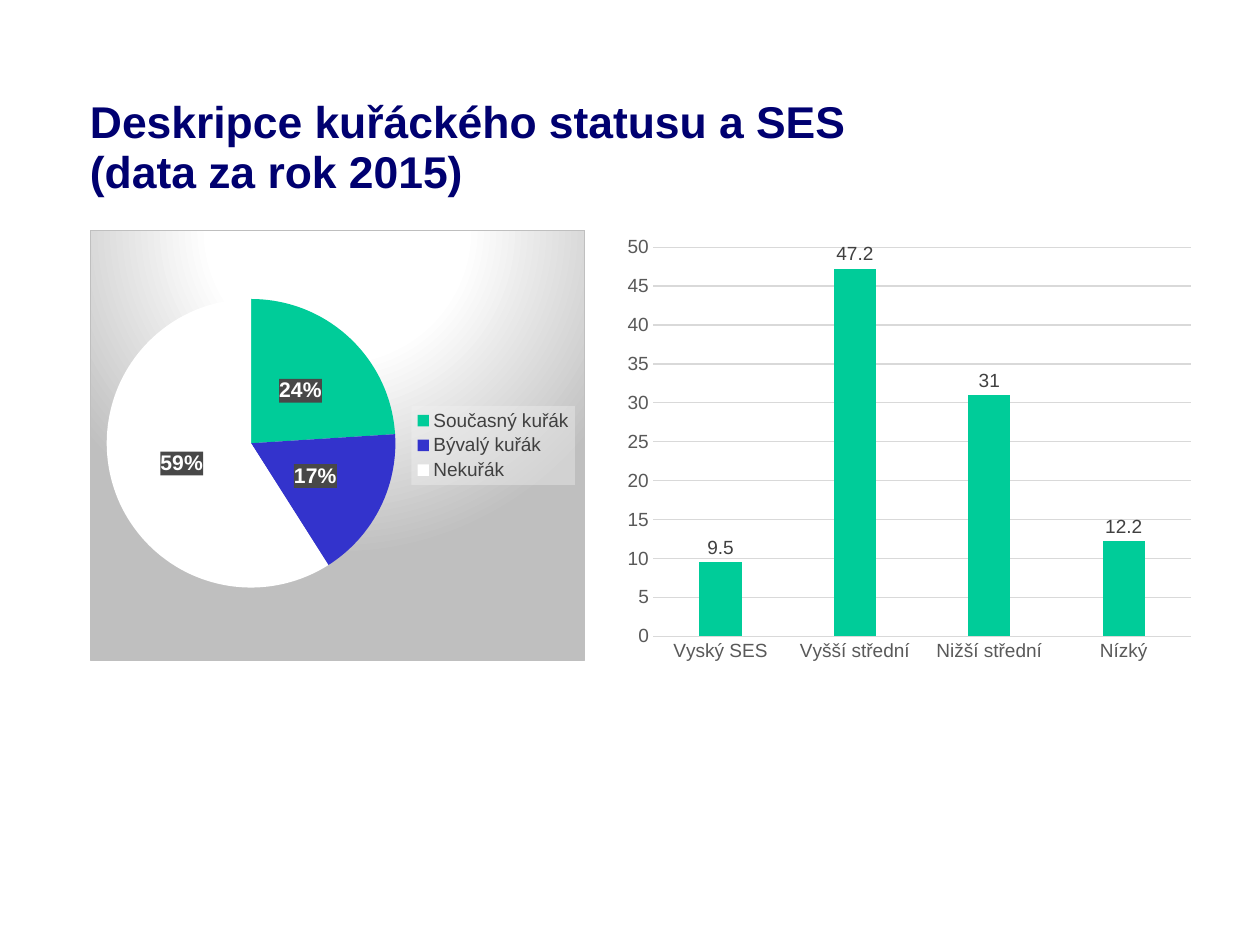
import pptx
import pptx.chart.data
import pptx.dml.color
import pptx.enum.chart
import pptx.enum.text
import pptx.oxml
import pptx.oxml.ns
import pptx.util

Cm = pptx.util.Cm
Pt = pptx.util.Pt
NAMESPACES = pptx.oxml.ns.nsdecls("c", "a")


def color(hex_string):
    return pptx.dml.color.RGBColor.from_string(hex_string)


def set_font(font, size, hex_string, bold=False):
    values = {"name": "Arial", "size": Pt(size), "bold": bold}
    for attribute, value in values.items():
        setattr(font, attribute, value)
    font.color.rgb = color(hex_string)


presentation = pptx.Presentation()
presentation.slide_width = Cm(28)
presentation.slide_height = Cm(21)
slide = presentation.slides.add_slide(presentation.slide_layouts[6])

title = slide.shapes.add_textbox(Cm(2), Cm(1.9), Cm(18.9), Cm(2.5))
title_format = {
    "word_wrap": False,
    "vertical_anchor": pptx.enum.text.MSO_ANCHOR.BOTTOM,
    "margin_left": 0,
    "margin_top": 0,
    "margin_right": 0,
    "margin_bottom": 0,
}
for attribute, value in title_format.items():
    setattr(title.text_frame, attribute, value)
paragraph = title.text_frame.paragraphs[0]
paragraph.text = "Deskripce kuřáckého statusu a SES\v(data za rok 2015)"
paragraph.line_spacing = 0.93
paragraph.alignment = pptx.enum.text.PP_ALIGN.LEFT
set_font(paragraph.font, 28, "000070", True)
for run in paragraph.runs:
    set_font(run.font, 28, "000070", True)

chart_type = pptx.enum.chart.XL_CHART_TYPE
label_position = pptx.enum.chart.XL_LABEL_POSITION
chart_specs = [
    {
        "type": chart_type.PIE,
        "box": (2, 5.1, 11, 9.6),
        "values": {"Současný kuřák": 24, "Bývalý kuřák": 17, "Nekuřák": 59},
        "plot_area": (0.03, 0.16, 0.59, 0.67),
        "label_font": (13.3, "FFFFFF", True),
        "labels": {
            "show_percentage": True,
            "show_value": False,
            "number_format": "0%",
            "number_format_is_linked": False,
            "position": label_position.CENTER,
        },
    },
    {
        "type": chart_type.COLUMN_CLUSTERED,
        "box": (13.6, 5.1, 13.13, 9.83),
        "values": {"Vyský SES": 9.5, "Vyšší střední": 47.2, "Nižší střední": 31, "Nízký": 12.2},
        "plot_area": (0.07, 0.04, 0.91, 0.88),
        "label_font": (12, "404040"),
        "labels": {"show_value": True, "position": label_position.OUTSIDE_END},
    },
]

charts = []
for chart_spec in chart_specs:
    chart_data = pptx.chart.data.CategoryChartData()
    chart_data.categories = list(chart_spec["values"])
    chart_data.add_series("Series 1", list(chart_spec["values"].values()))
    box = [Cm(length) for length in chart_spec["box"]]
    chart = slide.shapes.add_chart(chart_spec["type"], *box, chart_data).chart
    chart.has_title = False
    chart.has_legend = False
    set_font(chart.font, 10, "000000")
    plot = chart.plots[0]
    plot.vary_by_categories = chart_spec["type"] == chart_type.PIE
    plot.has_data_labels = True
    for attribute, value in chart_spec["labels"].items():
        setattr(plot.data_labels, attribute, value)
    set_font(plot.data_labels.font, *chart_spec["label_font"])

    plot_area = chart.element.xpath("c:chart/c:plotArea")[0]
    for layout in plot_area.xpath("c:layout"):
        plot_area.remove(layout)
    left, top, width, height = chart_spec["plot_area"]
    plot_area.insert(0, pptx.oxml.parse_xml(
        f'<c:layout {NAMESPACES}><c:manualLayout><c:layoutTarget val="inner"/>'
        '<c:xMode val="edge"/><c:yMode val="edge"/>'
        f'<c:x val="{left}"/><c:y val="{top}"/><c:w val="{width}"/><c:h val="{height}"/>'
        '</c:manualLayout></c:layout>'))
    charts.append(chart)

status_chart, ses_chart = charts

for index, hex_string in enumerate(["00CC99", "3333CC", "FFFFFF"]):
    fill = status_chart.plots[0].series[0].points[index].format.fill
    fill.solid()
    fill.fore_color.rgb = color(hex_string)
status_chart.has_legend = True
status_chart.legend.position = pptx.enum.chart.XL_LEGEND_POSITION.RIGHT
status_chart.legend.include_in_layout = False
set_font(status_chart.legend.font, 12, "404040")

gradient_stops = "".join(
    f'<a:gs pos="{position * 1000}"><a:srgbClr val="{hex_string}"/></a:gs>'
    for position, hex_string in [(0, "FFFFFF"), (39, "FFFFFF"), (100, "BFBFBF")])
status_fills = {
    "c:txPr": f'<a:gradFill><a:gsLst>{gradient_stops}</a:gsLst><a:path path="circle">'
              '<a:fillToRect l="50000" t="-80000" r="50000" b="180000"/></a:path></a:gradFill>'
              '<a:ln w="9525"><a:solidFill><a:srgbClr val="BFBFBF"/></a:solidFill></a:ln>',
    "c:chart/c:legend/c:txPr": '<a:solidFill><a:srgbClr val="F2F2F2">'
                               '<a:alpha val="39000"/></a:srgbClr></a:solidFill>',
    ".//c:dLbls/c:txPr": '<a:solidFill><a:srgbClr val="484848"/></a:solidFill>',
}
for text_location, fill_xml in status_fills.items():
    text_properties = status_chart.element.xpath(text_location)[0]
    text_properties.addprevious(
        pptx.oxml.parse_xml(f"<c:spPr {NAMESPACES}>{fill_xml}</c:spPr>"))

ses_plot = ses_chart.plots[0]
ses_plot.gap_width = 219
ses_plot.overlap = -27
column_fill = ses_plot.series[0].format.fill
column_fill.solid()
column_fill.fore_color.rgb = color("00CC99")

category_axis, value_axis = ses_chart.category_axis, ses_chart.value_axis
for axis in (category_axis, value_axis):
    axis.major_tick_mark = pptx.enum.chart.XL_TICK_MARK.NONE
    axis.minor_tick_mark = pptx.enum.chart.XL_TICK_MARK.NONE
    set_font(axis.tick_labels.font, 12, "595959")
for attribute, value in {"minimum_scale": 0, "maximum_scale": 50, "major_unit": 5}.items():
    setattr(value_axis, attribute, value)
value_axis.has_major_gridlines = True
value_axis.format.line.fill.background()
for line in (category_axis.format.line, value_axis.major_gridlines.format.line):
    line.width = Pt(0.75)
    line.color.rgb = color("D9D9D9")

presentation.save("out.pptx")
